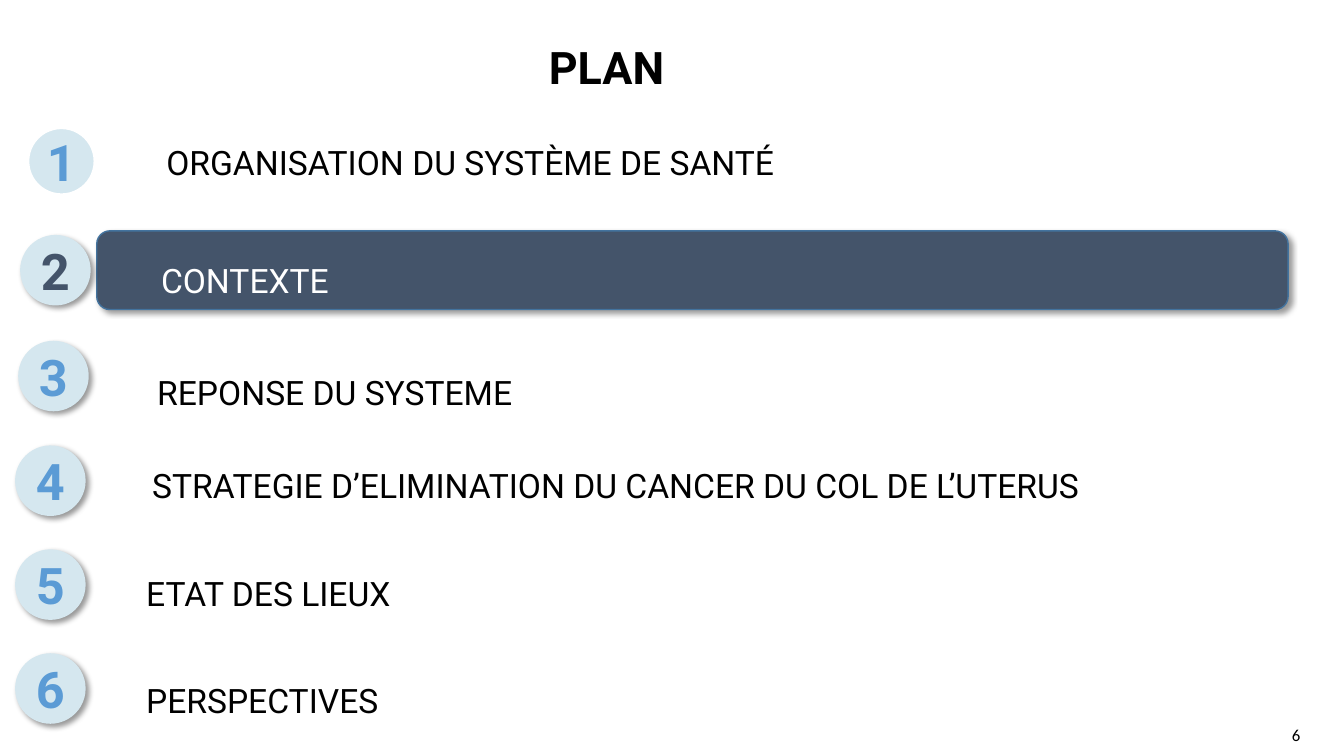
from lxml import etree
from pptx import Presentation
from pptx.dml.color import RGBColor
from pptx.enum import shapes, text
from pptx.oxml import ns
from pptx.util import Pt

NAVY = RGBColor(0x44, 0x54, 0x6A)
EDGE = RGBColor(0x43, 0x73, 0x9E)
PALE = RGBColor(0xD5, 0xE7, 0xEF)
BLUE = RGBColor(0x5B, 0x9B, 0xD5)
BLACK = RGBColor(0, 0, 0)
WHITE = RGBColor(255, 255, 255)

KIND = shapes.MSO_SHAPE
ALIGN = text.PP_ALIGN
MID = text.MSO_ANCHOR.MIDDLE
TOP = text.MSO_ANCHOR.TOP
ACTIVE = 2
DISC = 50.4

ITEMS = [
    ("ORGANISATION DU SYSTÈME DE SANTÉ", (18.7, 90), (75.6, 83.5, 851, 45.4)),
    ("CONTEXTE", (14.4, 167.8), (69.1, 164.9, 851, 56.2)),
    ("REPONSE DU SYSTEME", (13, 243.4), (69.1, 247.7, 851, 45.4)),
    ("STRATEGIE D’ELIMINATION DU CANCER DU COL DE L’UTERUS",
     (10.8, 318.2), (65.5, 313.9, 851, 45.4)),
    ("ETAT DES LIEUX", (10.8, 392.4), (61.2, 391, 838, 51.1)),
    ("PERSPECTIVES", (10.8, 466.6), (61.2, 468, 838, 45.4)),
]


def assign(item, style):
    for key, value in style.items():
        setattr(item, key, value)


def write(shape, words, size, color, align, bold=False, anchor=MID,
          space=1.0, inset=7.2, face="Roboto"):
    frame = shape.text_frame
    frame.text = words
    para = frame.paragraphs[0]
    assign(frame, {"word_wrap": True, "auto_size": text.MSO_AUTO_SIZE.NONE,
                   "vertical_anchor": anchor, "margin_left": Pt(inset),
                   "margin_right": Pt(7.2), "margin_top": Pt(3.6),
                   "margin_bottom": Pt(3.6)})
    assign(para, {"alignment": align, "line_spacing": space})
    assign(para.runs[0].font, {"name": face, "size": Pt(size), "bold": bold})
    para.runs[0].font.color.rgb = color


def shade(shape):
    glow = shape._element.spPr.find(ns.qn("a:effectLst"))
    drop = etree.SubElement(glow, ns.qn("a:outerShdw"), blurRad=str(Pt(4)),
                            dist=str(Pt(3)), dir="2700000", algn="tl",
                            rotWithShape="0")
    tint = etree.SubElement(drop, ns.qn("a:srgbClr"), val="000000")
    etree.SubElement(tint, ns.qn("a:alpha"), val="40000")


def solid(slide, kind, box, fill, line=None, width=1):
    shape = slide.shapes.add_shape(kind, *map(Pt, box))
    shape.shadow.inherit = False
    shape.fill.solid()
    shape.fill.fore_color.rgb = fill
    if line is None:
        shape.line.fill.background()
    else:
        shape.line.color.rgb = line
        shape.line.width = Pt(width)
    return shape


def title(slide, box):
    head = slide.shapes.title
    assign(head, dict(zip(("left", "top", "width", "height"), map(Pt, box))))
    write(head, "PLAN ", 32, BLACK, ALIGN.CENTER, bold=True, space=0.9)


def label(slide, words, box, active):
    if active:
        shape = solid(slide, KIND.ROUNDED_RECTANGLE, box, NAVY, EDGE)
        shade(shape)
    else:
        shape = slide.shapes.add_textbox(*map(Pt, box))
    write(shape, words, 24, WHITE if active else BLACK, ALIGN.JUSTIFY,
          anchor=MID if active else TOP, space=1.5, inset=43.2)


def badge(slide, num, spot, active):
    first = num == 1
    disc = solid(slide, KIND.OVAL, (*spot, DISC, DISC), PALE,
                 WHITE if first else None, 4.5)
    if not first:
        shade(disc)
    write(disc, str(num), 36, NAVY if active else BLUE, ALIGN.CENTER, bold=True)


def footer(slide, box):
    note = slide.shapes.add_textbox(*map(Pt, box))
    write(note, "6", 12, BLACK, ALIGN.CENTER, face="Calibri")


def agenda(deck):
    slide = deck.slides.add_slide(deck.slide_layouts[5])
    title(slide, (33.8, 13.7, 807, 72))
    for num, (words, spot, box) in enumerate(ITEMS, 1):
        label(slide, words, box, num == ACTIVE)
        badge(slide, num, spot, num == ACTIVE)
    footer(slide, (904.3, 512.6, 43.2, 24.5))


def main():
    deck = Presentation()
    assign(deck, {"slide_width": Pt(960), "slide_height": Pt(540)})
    agenda(deck)
    deck.save("out.pptx")


if __name__ == "__main__":
    main()
